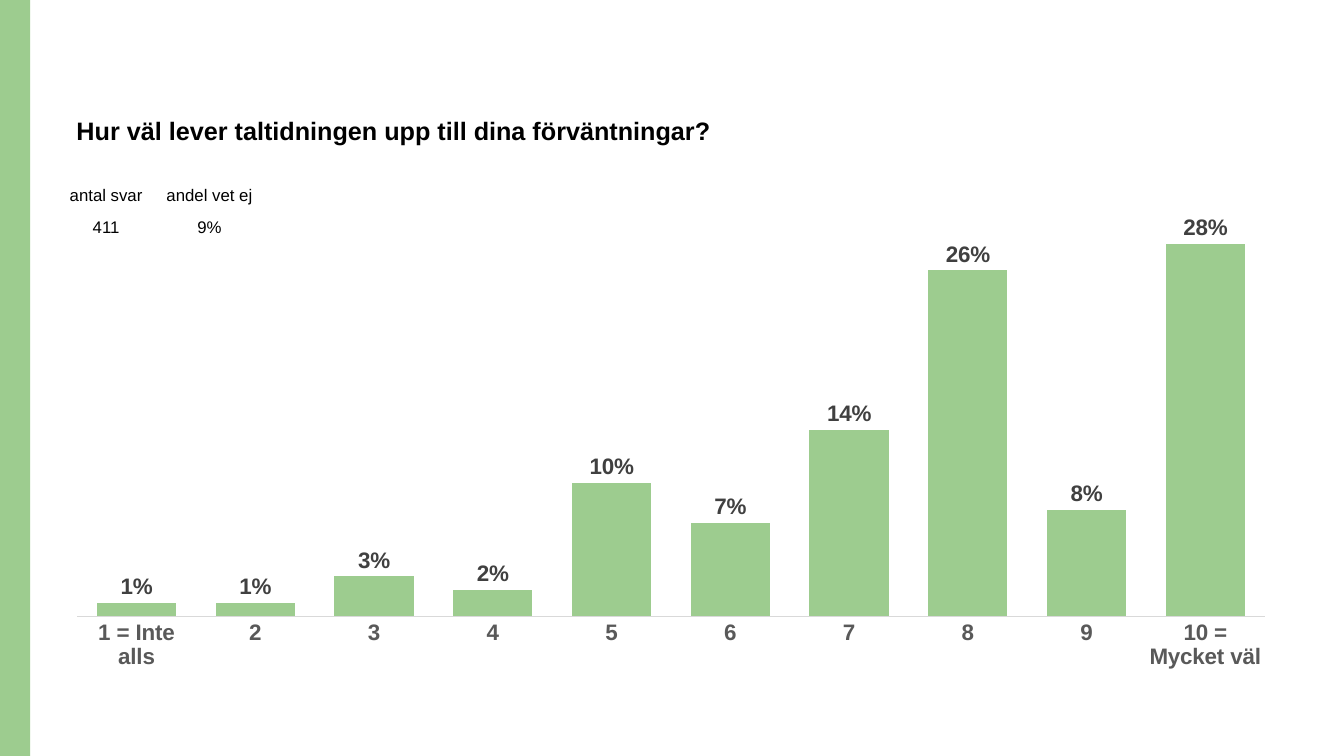
"""Build a survey slide with a title, a small table and a column chart."""
from dataclasses import dataclass
from typing import Any

import pptx
import pptx.chart.data
import pptx.dml.color
import pptx.enum.chart
import pptx.enum.shapes
import pptx.enum.text
import pptx.oxml
import pptx.oxml.ns
import pptx.util

Inches = pptx.util.Inches

COLORS = {
    "green": "9DCC8F",
    "black": "000000",
    "label": "404040",
    "axis": "595959",
    "line": "D9D9D9",
}


@dataclass(frozen=True)
class Style:
    size: float
    color: str
    bold: bool = False


@dataclass(frozen=True)
class Stat:
    label: str
    value: str


@dataclass(frozen=True)
class Score:
    label: str
    share: float


TITLE = Style(18, "black", True)
SMALL = Style(12, "black")
BASE = Style(10, "black")
TICK = Style(16, "axis", True)
SHARE = Style(16, "label", True)

STATS = [Stat("antal svar", "411"), Stat("andel vet ej", "9%")]
SCORES = [
    Score("1 = Inte alls", 0.01),
    Score("2", 0.01),
    Score("3", 0.03),
    Score("4", 0.02),
    Score("5", 0.10),
    Score("6", 0.07),
    Score("7", 0.14),
    Score("8", 0.26),
    Score("9", 0.08),
    Score("10 = Mycket väl", 0.28),
]
PLOT = {"x": 0.02, "y": 0.02, "w": 0.96, "h": 0.85}


def color(name: str) -> pptx.dml.color.RGBColor:
    return pptx.dml.color.RGBColor.from_string(COLORS[name])


def set_font(font: Any, style: Style) -> None:
    font.name = "Arial"
    font.size = pptx.util.Pt(style.size)
    font.bold = style.bold
    font.color.rgb = color(style.color)


def add_band(slide: Any) -> None:
    band = slide.shapes.add_shape(
        pptx.enum.shapes.MSO_SHAPE.RECTANGLE, 0, 0, Inches(0.3), Inches(7.5)
    )
    band.shadow.inherit = False
    band.fill.solid()
    band.fill.fore_color.rgb = color("green")
    band.line.fill.background()


def add_title(slide: Any, text: str) -> None:
    box = slide.shapes.add_textbox(
        Inches(0.66), Inches(0.51), Inches(11.95), Inches(0.99)
    )
    frame = box.text_frame
    frame.word_wrap = True
    frame.vertical_anchor = pptx.enum.text.MSO_ANCHOR.BOTTOM
    frame.text = text
    line = frame.paragraphs[0]
    line.line_spacing = 0.9
    set_font(line.runs[0].font, TITLE)


def fill_cell(cell: Any, text: str) -> None:
    cell.fill.background()
    cell.margin_left = cell.margin_right = cell.margin_top = Inches(0.01)
    cell.margin_bottom = 0
    cell.vertical_anchor = pptx.enum.text.MSO_ANCHOR.MIDDLE
    cell.text_frame.text = text
    line = cell.text_frame.paragraphs[0]
    line.alignment = pptx.enum.text.PP_ALIGN.CENTER
    set_font(line.runs[0].font, SMALL)


def add_stats(slide: Any, stats: list[Stat]) -> None:
    table = slide.shapes.add_table(
        2, len(stats), Inches(0.54), Inches(1.78), Inches(2.05), Inches(0.63)
    ).table
    table.first_row = table.horz_banding = False
    for col, stat in enumerate(stats):
        fill_cell(table.cell(0, col), stat.label)
        fill_cell(table.cell(1, col), stat.value)


def place_plot(chart: Any) -> None:
    tag = pptx.oxml.ns.qn
    area = chart.element.find(".//" + tag("c:plotArea"))
    for old in area.findall(tag("c:layout")):
        area.remove(old)
    modes = "".join(f'<c:{key}Mode val="edge"/>' for key in "xy")
    sizes = "".join(f'<c:{key} val="{val}"/>' for key, val in PLOT.items())
    area.insert(0, pptx.oxml.parse_xml(
        f'<c:layout {pptx.oxml.ns.nsdecls("c")}><c:manualLayout>'
        f'<c:layoutTarget val="inner"/>{modes}{sizes}'
        "</c:manualLayout></c:layout>"
    ))


def add_bars(slide: Any, scores: list[Score]) -> None:
    data = pptx.chart.data.CategoryChartData(number_format="0%")
    data.categories = [score.label for score in scores]
    data.add_series("Series 1", [score.share for score in scores])
    chart = slide.shapes.add_chart(
        pptx.enum.chart.XL_CHART_TYPE.COLUMN_CLUSTERED,
        Inches(0.52), Inches(2.06), Inches(12.27), Inches(4.66), data,
    ).chart
    chart.has_title = chart.has_legend = False
    set_font(chart.font, BASE)
    place_plot(chart)

    ticks = chart.category_axis
    ticks.major_tick_mark = pptx.enum.chart.XL_TICK_MARK.NONE
    ticks.format.line.color.rgb = color("line")
    ticks.format.line.width = pptx.util.Pt(0.75)
    set_font(ticks.tick_labels.font, TICK)

    scale = chart.value_axis
    scale.visible = False
    scale.has_major_gridlines = False
    scale.minimum_scale, scale.maximum_scale = 0, 0.3

    plot = chart.plots[0]
    plot.gap_width = 50
    plot.vary_by_categories = False
    bars = plot.series[0]
    bars.format.fill.solid()
    bars.format.fill.fore_color.rgb = color("green")
    labels = bars.data_labels
    labels.show_value = True
    labels.number_format = "0%"
    labels.number_format_is_linked = False
    labels.position = pptx.enum.chart.XL_LABEL_POSITION.OUTSIDE_END
    set_font(labels.font, SHARE)


def main() -> None:
    deck = pptx.Presentation()
    deck.slide_width, deck.slide_height = Inches(13.33), Inches(7.5)
    slide = deck.slides.add_slide(deck.slide_layouts[6])
    add_band(slide)
    add_title(slide, "Hur väl lever taltidningen upp till dina förväntningar?")
    add_stats(slide, STATS)
    add_bars(slide, SCORES)
    deck.save("out.pptx")


if __name__ == "__main__":
    main()
